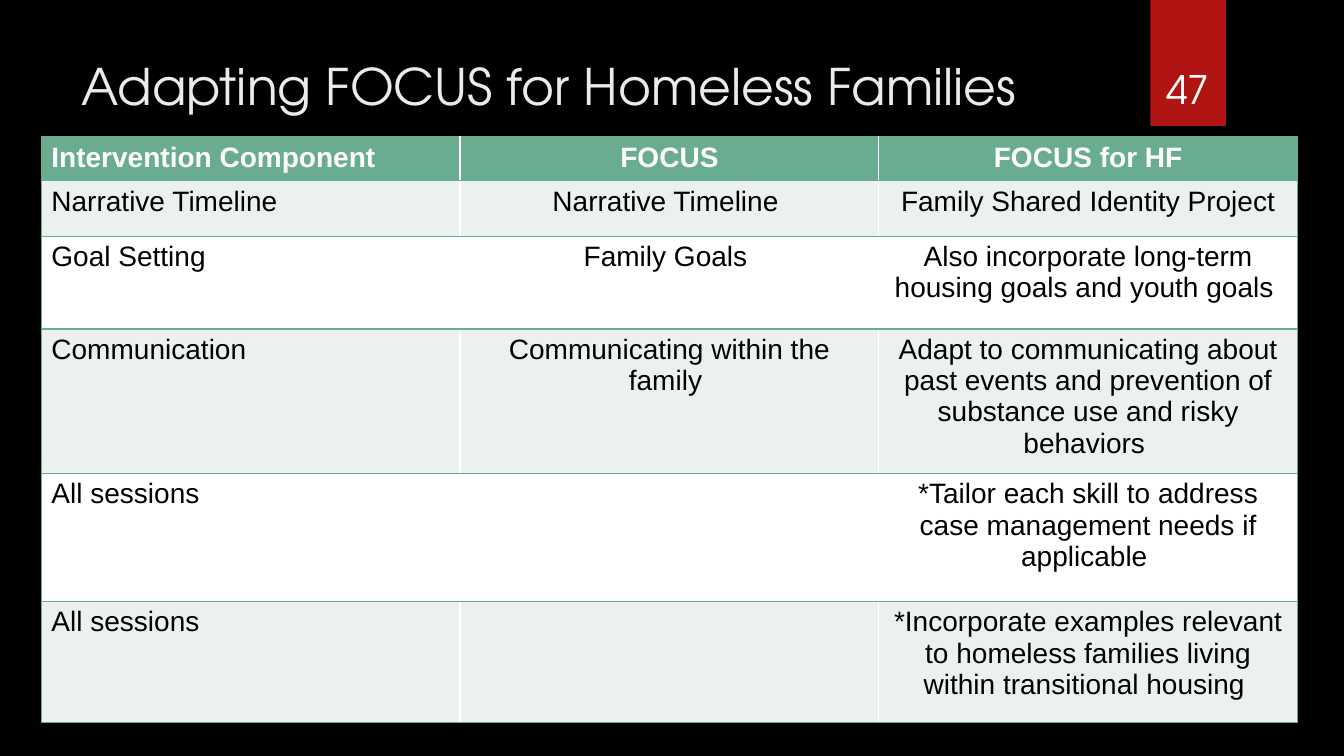
from pptx import Presentation
from pptx.dml.color import RGBColor
from pptx.enum.shapes import MSO_SHAPE
from pptx.enum.text import MSO_ANCHOR, PP_ALIGN
from pptx.oxml import parse_xml
from pptx.oxml.ns import nsdecls
from pptx.util import Inches, Pt

RECT = MSO_SHAPE.RECTANGLE
TOP, BOTTOM = MSO_ANCHOR.TOP, MSO_ANCHOR.BOTTOM
LEFT, CENTER = PP_ALIGN.LEFT, PP_ALIGN.CENTER

COLORS = {
    "back": "000000",
    "flag": "B01513",
    "title": "EBEBEB",
    "green": "6AAC90",
    "pale": "EBF1EE",
    "white": "FFFFFF",
    "black": "000000",
}
HEAD_FONT = "TeX Gyre Adventor"
BODY_FONT = "Arial"

ROWS = [
    ("Intervention Component", "FOCUS", "FOCUS for HF"),
    ("Narrative Timeline", "Narrative Timeline ", "Family Shared Identity Project"),
    ("Goal Setting", "Family Goals ",
     "Also incorporate long-term housing goals and youth goals "),
    ("Communication", "Communicating within the family ",
     "Adapt to communicating about past events and prevention of "
     "substance use and risky behaviors "),
    ("All sessions", "",
     "*Tailor each skill to address case management needs if applicable "),
    ("All sessions", "",
     "*Incorporate examples relevant to homeless families living "
     "within transitional housing "),
]
HEIGHTS = [0.43, 0.55, 0.92, 1.42, 1.27, 1.2]


def color(name):
    return RGBColor.from_string(COLORS[name])


class Deck:
    def __init__(self):
        self.prs = Presentation()
        self.prs.slide_width = Inches(13.33)
        self.prs.slide_height = Inches(7.5)
        self.slide = self.prs.slides.add_slide(self.prs.slide_layouts[6])
        fill = self.slide.background.fill
        fill.solid()
        fill.fore_color.rgb = color("back")

    def style(self, para, font, size, tint, align, bold=False):
        para.alignment = align
        para.font.size = Pt(size)
        for run in para.runs:
            run.font.name = font
            run.font.size = Pt(size)
            run.font.bold = bold
            run.font.color.rgb = color(tint)

    def block(self, box, tint):
        shape = self.slide.shapes.add_shape(RECT, *map(Inches, box))
        shape.shadow.inherit = False
        shape.fill.solid()
        shape.fill.fore_color.rgb = color(tint)
        shape.line.fill.background()

    def text(self, box, words, size, tint, align=LEFT, anchor=TOP):
        frame = self.slide.shapes.add_textbox(*map(Inches, box)).text_frame
        frame.word_wrap = True
        frame.vertical_anchor = anchor
        frame.text = words
        self.style(frame.paragraphs[0], HEAD_FONT, size, tint, align)

    def border(self, cell, sides):
        props = cell._tc.get_or_add_tcPr()
        for spot, side in enumerate(sides):
            props.insert(spot, parse_xml(
                f'<a:ln{side} {nsdecls("a")} w="12700"><a:solidFill>'
                f'<a:srgbClr val="{COLORS["green"]}"/></a:solidFill></a:ln{side}>'))

    def table(self, left, top, width, rows, heights):
        count = len(rows[0])
        table = self.slide.shapes.add_table(
            len(rows), count, Inches(left), Inches(top),
            Inches(width), Inches(sum(heights))).table
        for col in table.columns:
            col.width = Inches(width / count)
        for r, (row, height) in enumerate(zip(rows, heights)):
            table.rows[r].height = Inches(height)
            head = r == 0
            tint = "green" if head else "pale" if r % 2 else "white"
            for c, words in enumerate(row):
                cell = table.cell(r, c)
                cell.fill.solid()
                cell.fill.fore_color.rgb = color(tint)
                cell.text = words
                self.style(cell.text_frame.paragraphs[0], BODY_FONT, 20,
                           "white" if head else "black",
                           CENTER if c else LEFT, head)
                sides = ["L"] if c == 0 else ["R"] if c == count - 1 else []
                self.border(cell, sides + ["T", "B"])


def main():
    deck = Deck()
    deck.block((11.41, 0, 0.75, 1.25), "flag")
    deck.text((0.71, 0.5, 10.29, 0.87),
              "Adapting FOCUS for Homeless Families", 36, "title")
    deck.table(0.41, 1.36, 12.46, ROWS, HEIGHTS)
    deck.text((11.32, 0.32, 0.92, 0.84), "47", 28, "white", CENTER, BOTTOM)
    deck.prs.save("out.pptx")


if __name__ == "__main__":
    main()
